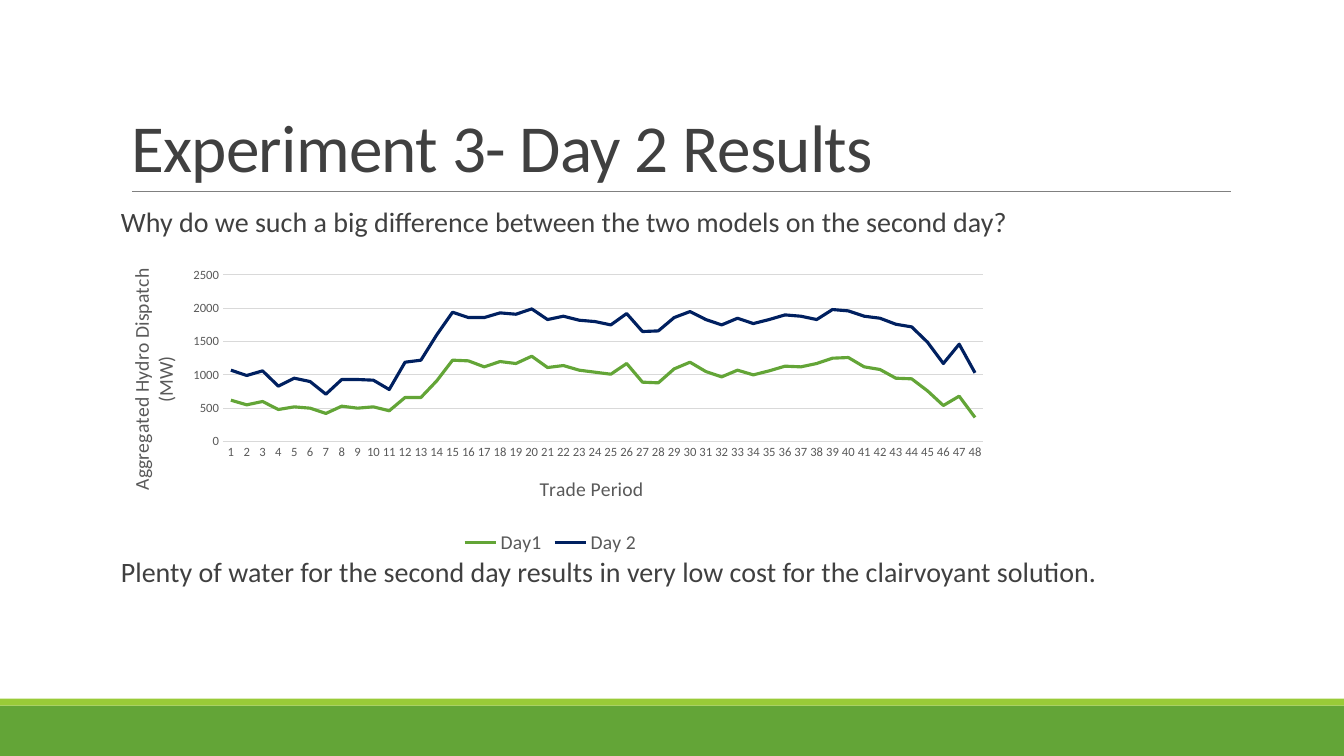
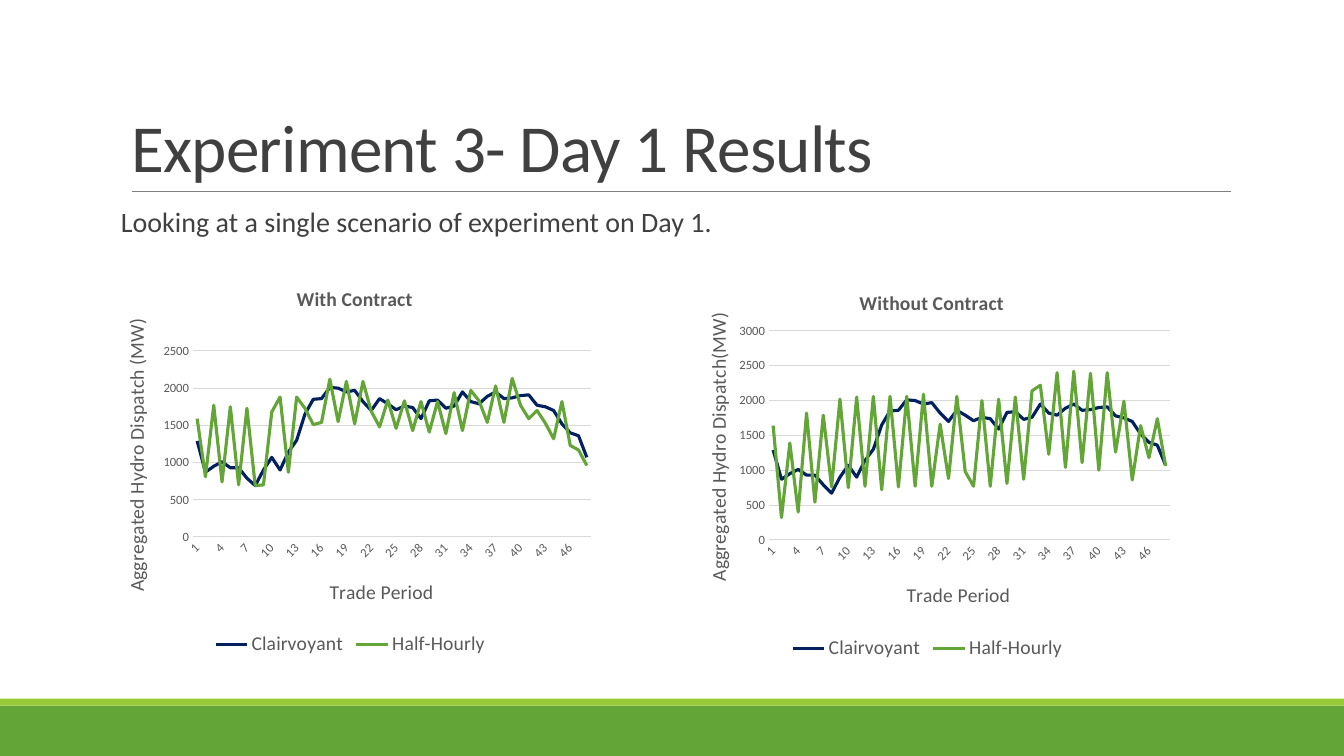
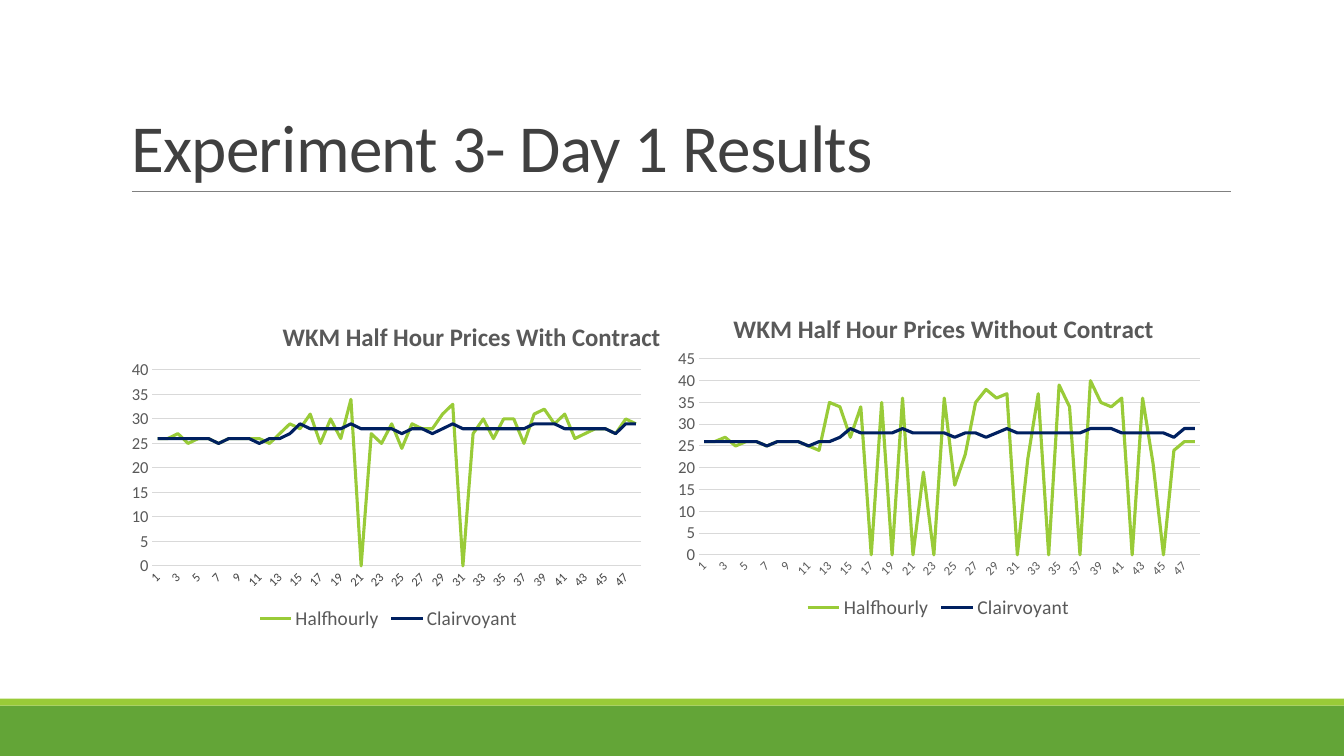
from dataclasses import dataclass
from typing import NamedTuple, Optional

from pptx import Presentation
from pptx.chart.data import CategoryChartData
from pptx.dml.color import RGBColor
from pptx.enum.chart import XL_CHART_TYPE as ChartType, XL_LEGEND_POSITION as LegendPos
from pptx.enum.chart import XL_TICK_MARK as Tick
from pptx.enum.shapes import MSO_CONNECTOR as Connector, MSO_SHAPE as Shape
from pptx.enum.text import MSO_ANCHOR as Anchor, MSO_AUTO_SIZE as AutoSize, PP_ALIGN as Align
from pptx.oxml import parse_xml
from pptx.oxml.ns import nsdecls, qn
from pptx.util import Pt


# Theme
@dataclass(frozen=True)
class Theme:
    font: str = "Calibri"
    green: str = "63A537"
    lime: str = "99CB38"
    navy: str = "002060"
    rule: str = "808080"
    text: str = "404040"
    chart_text: str = "595959"
    grid: str = "D9D9D9"
    title: float = 48
    body: float = 20
    heading: float = 18
    label: float = 14
    price_tick: float = 12
    tick: float = 9


THEME = Theme()
WIDTH, HEIGHT = 960, 540


class Box(NamedTuple):
    x: float
    y: float
    w: float
    h: float


class Spot(NamedTuple):
    x: float
    y: float


class Label(NamedTuple):
    text: str
    at: Spot


class Series(NamedTuple):
    name: str
    color: str
    values: list[int]


@dataclass(frozen=True)
class LineChart:
    frame: Box
    plot: Box
    top: int
    step: int
    series: list[Series]
    title: Optional[Label] = None
    x_title: Optional[Label] = None
    y_title: Optional[Label] = None
    title_size: float = THEME.label
    tick_size: float = THEME.tick


@dataclass(frozen=True)
class Page:
    title: str
    charts: list[LineChart]
    lines: tuple[str, ...] = ()
    line_gap: float = 0


# Data
PERIODS = [str(n) for n in range(1, 49)]

DAY_1 = [620, 550, 600, 480, 520, 500, 420, 530, 500, 520, 460, 660, 660, 910, 1220, 1210,
         1120, 1200, 1170, 1280, 1110, 1140, 1070, 1040, 1010, 1170, 890, 880, 1090, 1190,
         1050, 970, 1070, 1000, 1060, 1130, 1120, 1170, 1250, 1260, 1120, 1080, 950, 940,
         760, 540, 680, 360]
DAY_2 = [1070, 990, 1060, 830, 950, 900, 710, 930, 930, 920, 780, 1190, 1220, 1600, 1940,
         1860, 1860, 1930, 1910, 1990, 1830, 1880, 1820, 1800, 1750, 1920, 1650, 1660, 1860,
         1950, 1830, 1750, 1850, 1770, 1830, 1900, 1880, 1830, 1980, 1960, 1880, 1850, 1760,
         1720, 1490, 1170, 1460, 1030]

CLAIRVOYANT_WITH = [1290, 870, 950, 1010, 930, 930, 790, 690, 900, 1070, 900, 1140, 1300, 1650,
                    1850, 1860, 2010, 2000, 1950, 1970, 1820, 1700, 1860, 1790, 1710, 1760,
                    1740, 1590, 1830, 1840, 1730, 1760, 1950, 1820, 1790, 1890, 1950, 1860,
                    1870, 1900, 1910, 1770, 1750, 1700, 1520, 1400, 1360, 1070]
# Without the contract only periods 8 and 42 change
CLAIRVOYANT_WITHOUT = [{8: 670, 42: 1780}.get(n, v) for n, v in enumerate(CLAIRVOYANT_WITH, 1)]
HALF_HOURLY_WITH = [1590, 810, 1770, 740, 1750, 700, 1730, 690, 700, 1680, 1880, 870, 1880, 1730,
                    1510, 1540, 2120, 1550, 2090, 1520, 2090, 1690, 1480, 1840, 1460, 1830,
                    1430, 1820, 1410, 1820, 1390, 1940, 1430, 1970, 1830, 1540, 2030, 1540,
                    2130, 1770, 1590, 1700, 1530, 1320, 1820, 1230, 1170, 960]
HALF_HOURLY_WITHOUT = [1640, 320, 1390, 400, 1820, 540, 1790, 760, 2020, 750, 2050, 770, 2060,
                       720, 2060, 760, 2060, 770, 2090, 770, 1660, 880, 2060, 980, 770, 2000,
                       770, 2020, 810, 2050, 870, 2140, 2220, 1230, 2400, 1040, 2420, 1110,
                       2390, 1000, 2400, 1260, 1990, 860, 1640, 1180, 1740, 1060]

PRICE_CLAIRVOYANT = [26, 26, 26, 26, 26, 26, 25, 26, 26, 26, 25, 26, 26, 27, 29, 28, 28, 28, 28,
                     29, 28, 28, 28, 28, 27, 28, 28, 27, 28, 29, 28, 28, 28, 28, 28, 28, 28, 29,
                     29, 29, 28, 28, 28, 28, 28, 27, 29, 29]
PRICE_WITH = [26, 26, 27, 25, 26, 26, 25, 26, 26, 26, 26, 25, 27, 29, 28, 31, 25, 30, 26, 34, 0,
              27, 25, 29, 24, 29, 28, 28, 31, 33, 0, 27, 30, 26, 30, 30, 25, 31, 32, 29, 31, 26,
              27, 28, 28, 27, 30, 29]
PRICE_WITHOUT = [26, 26, 27, 25, 26, 26, 25, 26, 26, 26, 25, 24, 35, 34, 27, 34, 0, 35, 0, 36, 0,
                 19, 0, 36, 16, 23, 35, 38, 36, 37, 0, 22, 37, 0, 39, 34, 0, 40, 35, 34, 36, 0,
                 36, 21, 0, 24, 26, 26]


def dispatch_series(clairvoyant: list[int], half_hourly: list[int]) -> list[Series]:
    return [Series("Clairvoyant", THEME.navy, clairvoyant),
            Series("Half-Hourly", THEME.green, half_hourly)]


def price_chart(title: Label, frame: Box, plot: Box, top: int, prices: list[int]) -> LineChart:
    series = [Series("Halfhourly", THEME.lime, prices),
              Series("Clairvoyant", THEME.navy, PRICE_CLAIRVOYANT)]
    return LineChart(frame, plot, top, 5, series, title,
                     title_size=THEME.heading, tick_size=THEME.price_tick)


# Pages
PAGES = [
    Page("Experiment 3- Day 2 Results", [
        LineChart(Box(71.3, 187.2, 643.7, 211.7), Box(159.3, 196.4, 542.9, 119), 2500, 500,
                  [Series("Day1", THEME.green, DAY_1), Series("Day 2", THEME.navy, DAY_2)],
                  x_title=Label("Trade Period", Spot(382.9, 337.1)),
                  y_title=Label("Aggregated Hydro Dispatch (MW)", Spot(88.6, 189.3)))],
         ("Why do we such a big difference between the two models on the second day?",
          "Plenty of water for the second day results in very low cost for the clairvoyant "
          "solution."), 226),
    Page("Experiment 3- Day 1 Results", [
        LineChart(Box(71.3, 187.9, 357.8, 283.7), Box(137.9, 250.7, 284.3, 132.9), 2500, 500,
                  dispatch_series(CLAIRVOYANT_WITH, HALF_HOURLY_WITH),
                  Label("With Contract", Spot(209.3, 201.4)),
                  Label("Trade Period", Spot(232.9, 410.7)),
                  Label("Aggregated Hydro Dispatch (MW)", Spot(85, 225))),
        LineChart(Box(482.4, 190.8, 360, 283.7), Box(549.3, 236.4, 286.4, 149.3), 3000, 500,
                  dispatch_series(CLAIRVOYANT_WITHOUT, HALF_HOURLY_WITHOUT),
                  Label("Without Contract", Spot(611.4, 204.3)),
                  Label("Trade Period", Spot(645, 412.9)),
                  Label("Aggregated Hydro Dispatch(MW)", Spot(500.7, 220.7)))],
         ("Looking at a single scenario of experiment on Day 1.",)),
    Page("Experiment 3- Day 1 Results", [
        price_chart(Label("WKM Half Hour Prices With Contract", Spot(200.7, 225)),
                    Box(86.4, 214.6, 388.8, 239), Box(109.3, 264.3, 355, 140), 40, PRICE_WITH),
        price_chart(Label("WKM Half Hour Prices Without Contract", Spot(520.7, 219.3)),
                    Box(475.9, 206.6, 388.8, 239), Box(499.3, 256.4, 357.9, 140), 45,
                    PRICE_WITHOUT)]),
]


# Helpers
def rgb(color: str) -> RGBColor:
    return RGBColor.from_string(color)


def set_font(font, size: float, color: str, bold: bool = False) -> None:
    font.name, font.size, font.bold = THEME.font, Pt(size), bold
    font.color.rgb = rgb(color)


def set_line(line, color: str, width: float) -> None:
    line.color.rgb = rgb(color)
    line.width = Pt(width)


def place(part, frame: Box, at: Spot | Box) -> None:
    """Fix a chart part at a place given in slide points."""
    values = {"x": (at.x - frame.x) / frame.w, "y": (at.y - frame.y) / frame.h}
    target = ""
    if isinstance(at, Box):
        values |= {"w": at.w / frame.w, "h": at.h / frame.h}
        target = '<c:layoutTarget val="inner"/>'
    sizes = "".join(f'<c:{key} val="{value:.4f}"/>' for key, value in values.items())
    for old in part.findall(qn("c:layout")):
        part.remove(old)
    part.insert(0 if part.find(qn("c:tx")) is None else 1, parse_xml(
        f'<c:layout {nsdecls("c")}><c:manualLayout>{target}<c:xMode val="edge"/>'
        f'<c:yMode val="edge"/>{sizes}</c:manualLayout></c:layout>'))


def write_title(title, text: str, size: float, bold: bool = False) -> None:
    p = title.text_frame.paragraphs[0]
    p.text = text
    set_font(p.font, size, THEME.chart_text, bold)


# Shared frame: bands, rule and title
def add_frame(s, title: str) -> None:
    for top, height, color in ((504, 36, THEME.green), (499, 5, THEME.lime)):
        band = s.shapes.add_shape(Shape.RECTANGLE, 0, Pt(top), Pt(WIDTH), Pt(height))
        band.shadow.inherit = False
        band.fill.solid()
        band.fill.fore_color.rgb = rgb(color)
        band.line.fill.background()

    rule = s.shapes.add_connector(Connector.STRAIGHT, Pt(94.3), Pt(136.8), Pt(879), Pt(136.8))
    set_line(rule.line, THEME.rule, 0.5)
    rule.element.spPr.append(parse_xml(f'<a:effectLst {nsdecls("a")}/>'))

    sp = s.shapes.title
    sp.left, sp.top, sp.width, sp.height = Pt(86.4), Pt(22.3), Pt(792), Pt(114.5)
    tf = sp.text_frame
    tf.auto_size, tf.vertical_anchor, tf.word_wrap = AutoSize.NONE, Anchor.BOTTOM, True
    p = tf.paragraphs[0]
    p.alignment, p.line_spacing = Align.LEFT, 0.85
    r = p.add_run()
    r.text = title
    set_font(r.font, THEME.title, THEME.text)
    r.font._element.set("spc", "-50")


def add_body(s, lines: tuple[str, ...], gap: float) -> None:
    tf = s.shapes.add_textbox(Pt(86.4), Pt(145.4), Pt(792), Pt(316.8)).text_frame
    tf.word_wrap = True
    tf.margin_left = tf.margin_right = 0
    for i, line in enumerate(lines):
        p = tf.add_paragraph() if i else tf.paragraphs[0]
        p.text = line
        p.line_spacing, p.space_after = 0.9, Pt(2)
        p.space_before = Pt(gap if i else 12)
        set_font(p.font, THEME.body, THEME.text)


def add_line_chart(s, spec_: LineChart) -> None:
    data = CategoryChartData()
    data.categories = PERIODS
    for row in spec_.series:
        data.add_series(row.name, row.values)
    frame = spec_.frame
    chart = s.shapes.add_chart(ChartType.LINE, *map(Pt, frame), data).chart
    set_font(chart.font, THEME.label, THEME.chart_text)
    root = chart.element

    # Series
    for line, row in zip(chart.plots[0].series, spec_.series):
        line.smooth = False
        set_line(line.format.line, row.color, 2.25)

    # Axes
    x_axis, y_axis = chart.category_axis, chart.value_axis
    for axis, size in ((x_axis, THEME.tick), (y_axis, spec_.tick_size)):
        axis.major_tick_mark = axis.minor_tick_mark = Tick.NONE
        set_font(axis.tick_labels.font, size, THEME.chart_text)
    set_line(x_axis.format.line, THEME.grid, 0.75)
    root.xpath(".//c:catAx/c:txPr/a:bodyPr")[0].set("rot", "-60000000")
    y_axis.format.line.fill.background()
    set_line(y_axis.major_gridlines.format.line, THEME.grid, 0.75)
    y_axis.minimum_scale, y_axis.maximum_scale = 0, spec_.top
    y_axis.major_unit = spec_.step

    # Titles
    chart.has_title = spec_.title is not None
    if spec_.title:
        write_title(chart.chart_title, spec_.title.text, spec_.title_size, True)
        place(root.xpath("c:chart/c:title")[0], frame, spec_.title.at)
    for axis, tag, label in ((x_axis, "catAx", spec_.x_title), (y_axis, "valAx", spec_.y_title)):
        axis.has_title = label is not None
        if label:
            write_title(axis.axis_title, label.text, THEME.label)
            place(root.xpath(f".//c:{tag}/c:title")[0], frame, label.at)
    for body in root.xpath(".//c:valAx/c:title//a:bodyPr"):
        body.set("rot", "-5400000")
        body.set("vert", "horz")

    # Legend and plot area
    chart.has_legend = True
    chart.legend.position = LegendPos.BOTTOM
    chart.legend.include_in_layout = False
    set_font(chart.legend.font, THEME.label, THEME.chart_text)
    place(root.xpath("c:chart/c:plotArea")[0], frame, spec_.plot)


def main() -> None:
    prs = Presentation()
    prs.slide_width, prs.slide_height = Pt(WIDTH), Pt(HEIGHT)
    title_only = prs.slide_layouts[5]
    for page in PAGES:
        s = prs.slides.add_slide(title_only)
        add_frame(s, page.title)
        for chart in page.charts:
            add_line_chart(s, chart)
        if page.lines:
            add_body(s, page.lines, page.line_gap)
    prs.save("out.pptx")


if __name__ == "__main__":
    main()
